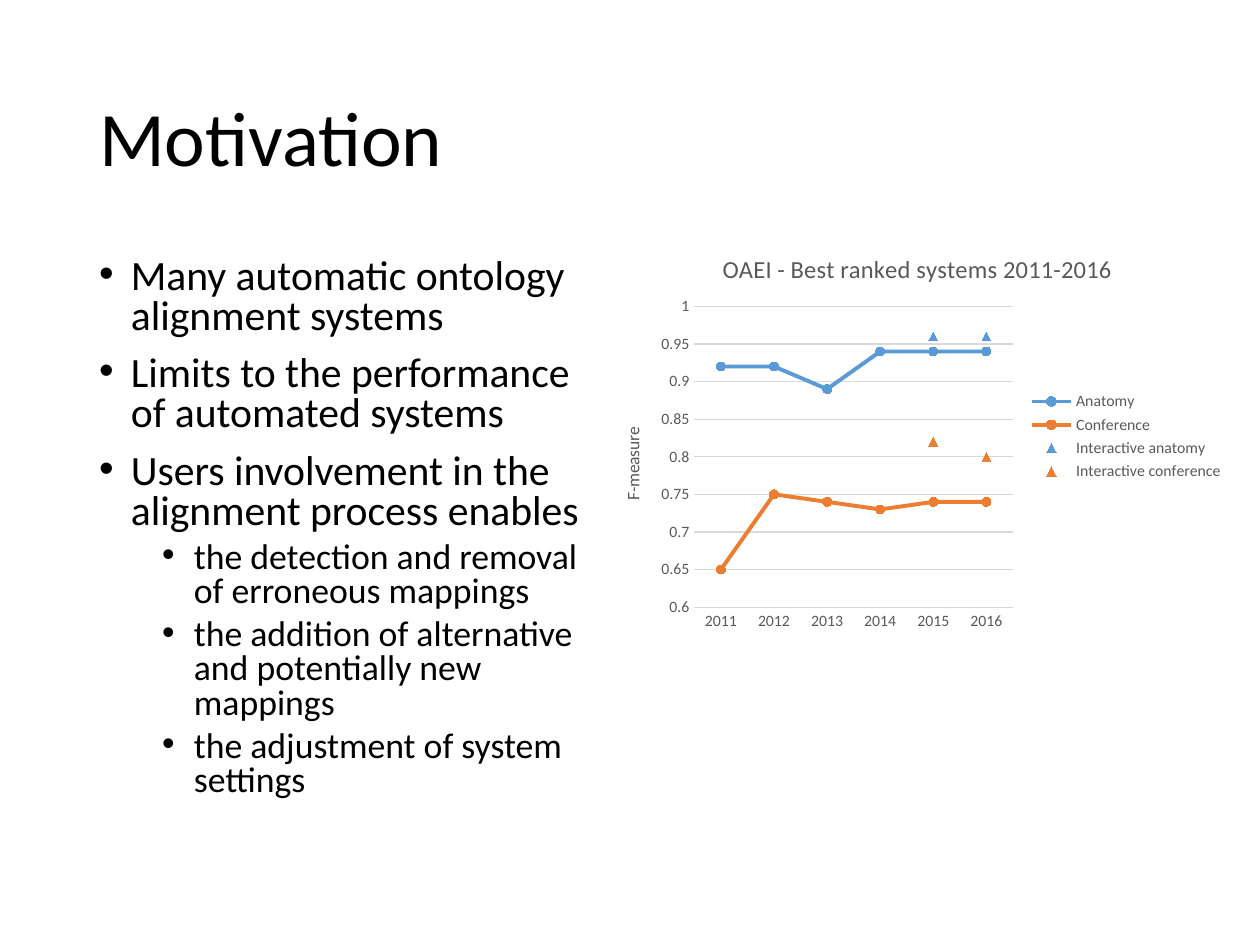
from dataclasses import dataclass

from lxml import etree
from pptx import Presentation
from pptx.chart.data import CategoryChartData
from pptx.dml.color import RGBColor
from pptx.enum.chart import (XL_CHART_TYPE, XL_LEGEND_POSITION,
                             XL_MARKER_STYLE, XL_TICK_MARK)
from pptx.enum.text import MSO_ANCHOR
from pptx.oxml import parse_xml
from pptx.oxml.ns import nsdecls, qn
from pptx.util import Cm, Pt

LINE_MARKERS = XL_CHART_TYPE.LINE_MARKERS
LEGEND_RIGHT = XL_LEGEND_POSITION.RIGHT
CIRCLE = XL_MARKER_STYLE.CIRCLE
TRIANGLE = XL_MARKER_STYLE.TRIANGLE
NO_TICK = XL_TICK_MARK.NONE
TOP, MIDDLE = MSO_ANCHOR.TOP, MSO_ANCHOR.MIDDLE

BLACK = RGBColor(0x00, 0x00, 0x00)
GREY = RGBColor(0x59, 0x59, 0x59)
GRID = RGBColor(0xD9, 0xD9, 0xD9)
BLUE = RGBColor(0x5B, 0x9B, 0xD5)
ORANGE = RGBColor(0xED, 0x7D, 0x31)
FONT = "Calibri"


@dataclass
class Point:
    text: str
    level: int = 0


@dataclass
class System:
    name: str
    values: list[float | None]
    color: RGBColor
    interactive: bool = False


POINTS = [
    Point("Many automatic ontology alignment systems"),
    Point("Limits to the performance of automated systems"),
    Point("Users involvement in the alignment process enables"),
    Point("the detection and removal of erroneous mappings", 1),
    Point("the addition of alternative and potentially new mappings", 1),
    Point("the adjustment of system settings", 1),
]
POINT_SIZES = [23.8, 20.4]
POINT_GAPS = [10, 5]

YEARS = [str(year) for year in range(2011, 2017)]
SYSTEMS = [
    System("Anatomy", [0.92, 0.92, 0.89, 0.94, 0.94, 0.94], BLUE),
    System("Conference", [0.65, 0.75, 0.74, 0.73, 0.74, 0.74], ORANGE),
    System("Interactive anatomy", [None] * 4 + [0.96, 0.96], BLUE, True),
    System("Interactive conference", [None] * 4 + [0.82, 0.8], ORANGE, True),
]


def style_font(font, size: float, color: RGBColor) -> None:
    font.name, font.size, font.bold = FONT, Pt(size), False
    font.color.rgb = color


def write(paragraph, text: str, *, size: float, color: RGBColor = BLACK,
          spacing: float | None = None, before: float | None = None,
          bullet_left: int | None = None) -> None:
    """Fill a paragraph with one formatted run, bulleted if it has an indent."""
    run = paragraph.add_run()
    run.text = text
    style_font(run.font, size, color)
    if spacing is not None:
        paragraph.line_spacing = spacing
    if before is not None:
        paragraph.space_before = Pt(before)
    if bullet_left is not None:
        properties = paragraph._p.get_or_add_pPr()
        properties.set("marL", str(bullet_left))
        properties.set("indent", str(-Cm(0.64)))
        etree.SubElement(properties, qn("a:buFont"), typeface="Arial")
        etree.SubElement(properties, qn("a:buChar"), char="•")


def add_frame(slide, left: float, top: float, width: float, height: float,
              anchor=TOP):
    frame = slide.shapes.add_textbox(Cm(left), Cm(top), Cm(width),
                                     Cm(height)).text_frame
    frame.word_wrap = True
    frame.vertical_anchor = anchor
    return frame


def add_points(slide, points: list[Point]) -> None:
    frame = add_frame(slide, 1.75, 5.08, 10.8, 12.09)
    for index, point in enumerate(points):
        paragraph = frame.add_paragraph() if index else frame.paragraphs[0]
        paragraph.level = point.level
        write(paragraph, point.text, size=POINT_SIZES[point.level],
              spacing=0.8, before=POINT_GAPS[point.level],
              bullet_left=Cm(0.64 + 1.27 * point.level))


def style_series(series, system: System) -> None:
    series.smooth = False
    line = series.format.line
    if system.interactive:
        line.fill.background()
    else:
        line.color.rgb = system.color
        line.width = Pt(2.25)
    marker = series.marker
    marker.style = TRIANGLE if system.interactive else CIRCLE
    marker.size = 5
    marker.format.fill.solid()
    marker.format.fill.fore_color.rgb = system.color
    marker.format.line.color.rgb = system.color


def place_plot(chart, x: float, y: float, w: float, h: float) -> None:
    """Fix the inner plot area, in fractions of the chart."""
    area = chart._chartSpace.chart.plotArea
    for old in area.findall(qn("c:layout")):
        area.remove(old)
    area.insert(0, parse_xml(
        f'<c:layout {nsdecls("c")}><c:manualLayout>'
        '<c:layoutTarget val="inner"/>'
        '<c:xMode val="edge"/><c:yMode val="edge"/>'
        f'<c:x val="{x}"/><c:y val="{y}"/><c:w val="{w}"/><c:h val="{h}"/>'
        '</c:manualLayout></c:layout>'))


def add_results(slide, systems: list[System]) -> None:
    data = CategoryChartData()
    data.categories = YEARS
    for system in systems:
        data.add_series(system.name, system.values)
    chart = slide.shapes.add_chart(LINE_MARKERS, Cm(12.07), Cm(4.7), Cm(12.85),
                                   Cm(8.2), data).chart
    style_font(chart.font, 10, BLACK)

    # Titles and legend
    chart.has_title = True
    write(chart.chart_title.text_frame.paragraphs[0],
          "OAEI - Best ranked systems 2011-2016", size=14, color=GREY)
    chart.chart_title.include_in_layout = False
    chart.has_legend = True
    chart.legend.position = LEGEND_RIGHT
    chart.legend.include_in_layout = False
    style_font(chart.legend.font, 9, GREY)

    # Axes
    years, measure = chart.category_axis, chart.value_axis
    for axis in (years, measure):
        axis.major_tick_mark = axis.minor_tick_mark = NO_TICK
        style_font(axis.tick_labels.font, 9, GREY)
    measure.minimum_scale, measure.maximum_scale = 0.6, 1
    measure.major_unit = 0.05
    measure.tick_labels.number_format = "General"
    measure.tick_labels.number_format_is_linked = False
    measure.format.line.fill.background()
    write(measure.axis_title.text_frame.paragraphs[0], "F-measure",
          size=10, color=GREY)
    for line in (years.format.line, measure.major_gridlines.format.line):
        line.color.rgb = GRID
        line.width = Pt(0.75)

    # Series
    for series, system in zip(chart.plots[0].series, systems):
        style_series(series, system)
    place_plot(chart, 0.15, 0.18, 0.5, 0.74)


def main() -> None:
    deck = Presentation()
    deck.slide_width, deck.slide_height = Cm(25.4), Cm(19.05)
    slide = deck.slides.add_slide(deck.slide_layouts[6])

    # Heading
    heading = add_frame(slide, 1.75, 1.02, 21.9, 3.68, MIDDLE)
    write(heading.paragraphs[0], "Motivation", size=44, spacing=0.9)

    # Argument on the left, evidence on the right
    add_points(slide, POINTS)
    add_results(slide, SYSTEMS)
    deck.save("out.pptx")


if __name__ == "__main__":
    main()
